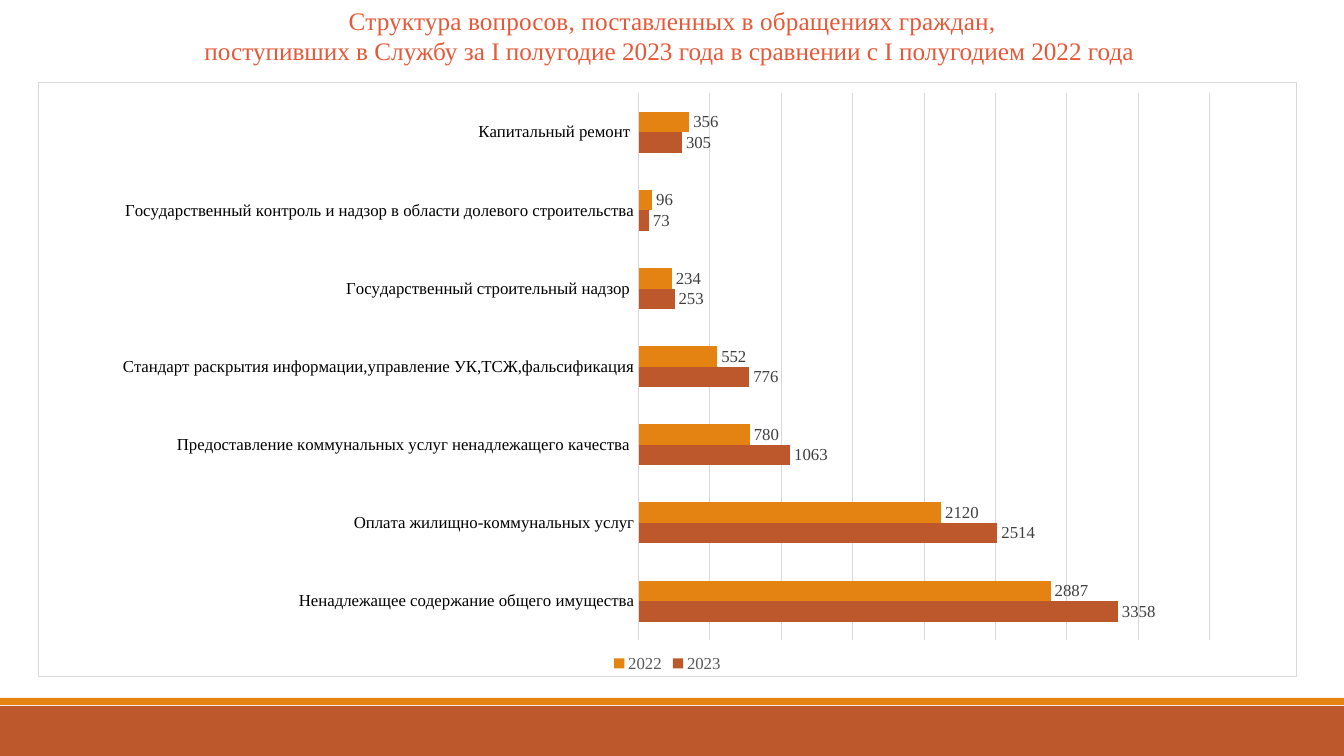
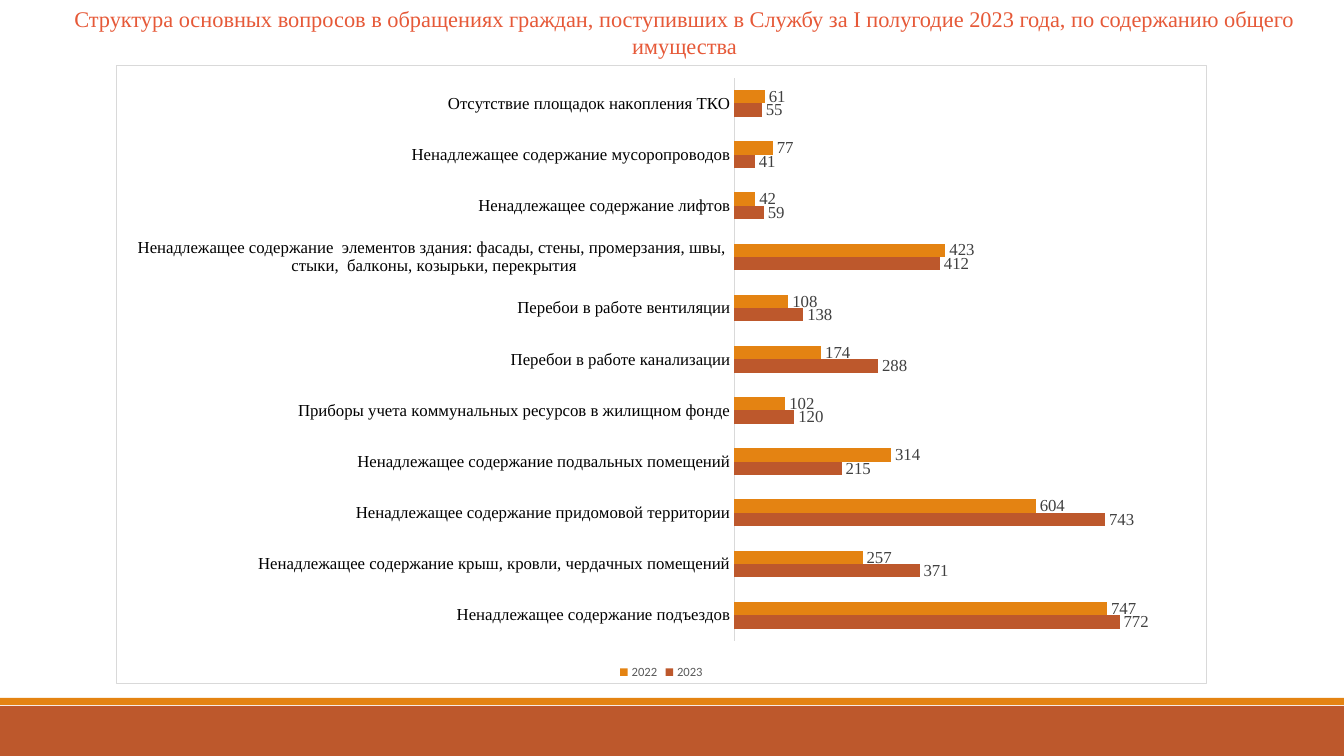
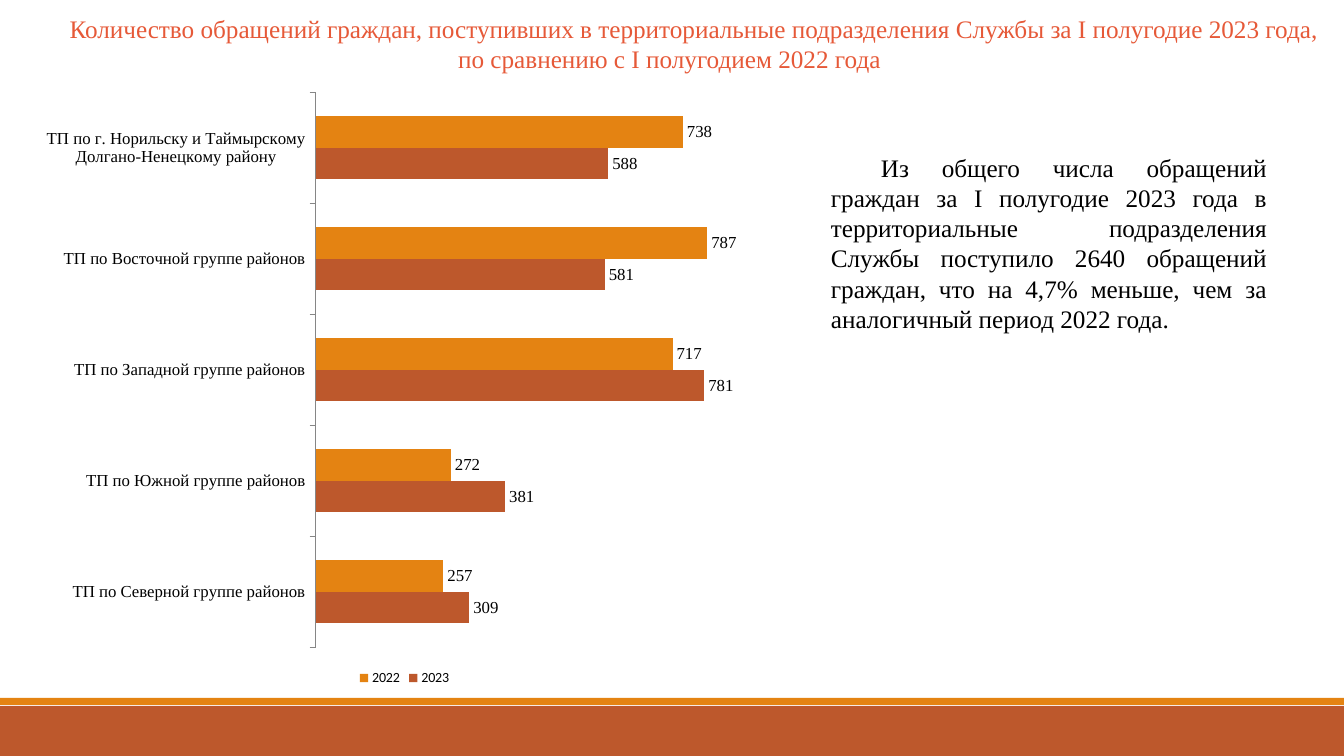
from dataclasses import dataclass

import lxml.etree
import pptx
import pptx.chart.data
import pptx.dml.color
import pptx.enum.chart
import pptx.enum.shapes
import pptx.enum.text
import pptx.oxml
import pptx.oxml.ns
import pptx.util

# Shared look
EMU_PER_PX = 12192000 / 1344
SLIDE_W, SLIDE_H = 1344, 756
SERIF, SANS = "Times New Roman", "Calibri"
RUST, ORANGE, TITLE_RED = "BD582C", "E48312", "E65938"
BLACK, DARK_GREY, MID_GREY = "000000", "404040", "595959"
AXIS_GREY, PALE_GREY, WHITE = "868686", "D9D9D9", "FFFFFF"
LABEL_SIZE = 12
CENTER = pptx.enum.text.PP_ALIGN.CENTER
JUSTIFY = pptx.enum.text.PP_ALIGN.JUSTIFY


@dataclass(frozen=True)
class Box:
    left: int
    top: int
    width: int
    height: int

    def emu(self) -> tuple[int, ...]:
        return tuple(px(n) for n in (self.left, self.top, self.width, self.height))


@dataclass(frozen=True)
class Line:
    text: str
    indent: int = 0
    spacing: int = 0  # hundredths of a point


@dataclass(frozen=True)
class Topic:
    category: str
    count_2023: int
    count_2022: int


@dataclass(frozen=True)
class Comparison:
    box: Box
    plot: tuple[float, float, float, float]  # shares of the chart: x, y, w, h
    topics: list[Topic]
    axis_max: int
    gap: int = 182
    framed: bool = True
    gridlines: bool = False
    ticks: bool = False
    value_color: str = DARK_GREY
    axis_color: str = PALE_GREY
    legend_font: str = SANS
    legend_size: int = 9
    legend_color: str = MID_GREY


@dataclass(frozen=True)
class Page:
    title_box: Box
    title: list[Line]
    title_size: int
    comparison: Comparison


BANDS = [(Box(0, 706, SLIDE_W, 50), RUST), (Box(0, 698, SLIDE_W, 7), ORANGE)]

CONCLUSION_BOX = Box(821, 147, 456, 194)
CONCLUSION = Line(
    "Из общего числа обращений граждан за I полугодие 2023 года в территориальные "
    "подразделения Службы поступило 2640 обращений граждан, что на 4,7% меньше, чем "
    "за аналогичный период 2022 года.",
    indent=50,
)

PAGES = [
    Page(
        Box(4, 0, 1337, 72),
        [
            Line("Структура вопросов, поставленных в обращениях граждан,", spacing=10),
            Line("поступивших в Службу за I полугодие 2023 года в сравнении "
                 "с I полугодием 2022 года "),
        ],
        18,
        Comparison(
            Box(38, 82, 1259, 595),
            (0.477, 0.018, 0.454, 0.921),
            [
                Topic("Ненадлежащее содержание общего имущества", 3358, 2887),
                Topic("Оплата жилищно-коммунальных услуг", 2514, 2120),
                Topic("Предоставление коммунальных услуг ненадлежащего качества ", 1063, 780),
                Topic("Стандарт раскрытия информации,управление УК,ТСЖ,фальсификация", 776, 552),
                Topic("Государственный строительный надзор ", 253, 234),
                Topic("Государственный контроль и надзор в области долевого строительства", 73, 96),
                Topic("Капитальный ремонт ", 305, 356),
            ],
            axis_max=4000,
            gridlines=True,
            legend_font=SERIF,
            legend_size=12,
        ),
    ),
    Page(
        Box(51, 0, 1267, 65),
        [Line("Структура основных вопросов в обращениях граждан, поступивших в Службу "
              "за I полугодие 2023 года, по содержанию общего имущества")],
        16,
        Comparison(
            Box(116, 65, 1091, 619),
            (0.567, 0.02, 0.412, 0.911),
            [
                Topic("Ненадлежащее содержание подъездов", 772, 747),
                Topic("Ненадлежащее содержание крыш, кровли, чердачных помещений", 371, 257),
                Topic("Ненадлежащее содержание придомовой территории", 743, 604),
                Topic("Ненадлежащее содержание подвальных помещений", 215, 314),
                Topic("Приборы учета коммунальных ресурсов в жилищном фонде", 120, 102),
                Topic("Перебои в работе канализации", 288, 174),
                Topic("Перебои в работе вентиляции", 138, 108),
                Topic("Ненадлежащее содержание  элементов здания: фасады, стены, "
                      "промерзания, швы,  стыки,  балконы, козырьки, перекрытия", 412, 423),
                Topic("Ненадлежащее содержание лифтов", 59, 42),
                Topic("Ненадлежащее содержание мусоропроводов", 41, 77),
                Topic("Отсутствие площадок накопления ТКО", 55, 61),
            ],
            axis_max=900,
        ),
    ),
    Page(
        Box(10, 8, 1319, 72),
        [
            Line("Количество обращений граждан, поступивших в территориальные "
                 "подразделения Службы за I полугодие 2023 года,", indent=49),
            Line("по сравнению с I полугодием 2022 года"),
        ],
        18,
        Comparison(
            Box(31, 80, 747, 610),
            (0.381, 0.02, 0.6, 0.91),
            [
                Topic("ТП по Северной группе районов", 309, 257),
                Topic("ТП по Южной группе районов", 381, 272),
                Topic("ТП по Западной группе районов", 781, 717),
                Topic("ТП по Восточной группе районов", 581, 787),
                Topic("ТП по г. Норильску и Таймырскому Долгано-Ненецкому району", 588, 738),
            ],
            axis_max=900,
            gap=150,
            framed=False,
            ticks=True,
            value_color=BLACK,
            axis_color=AXIS_GREY,
            legend_size=10,
            legend_color=BLACK,
        ),
    ),
]


# Formatting helpers
def px(length: int) -> int:
    return round(length * EMU_PER_PX)


def rgb(color: str) -> pptx.dml.color.RGBColor:
    return pptx.dml.color.RGBColor.from_string(color)


def set_font(font, name: str, size: int, color: str) -> None:
    font.name = name
    font.size = pptx.util.Pt(size)
    font.bold = False
    font.color.rgb = rgb(color)


def set_line(line, color: str) -> None:
    line.color.rgb = rgb(color)
    line.width = pptx.util.Pt(0.75)


def fill_text(shape, box: Box, lines: list[Line], size: int, color: str, align) -> None:
    shape.left, shape.top, shape.width, shape.height = box.emu()
    frame = shape.text_frame
    frame.word_wrap = True
    frame.auto_size = pptx.enum.text.MSO_AUTO_SIZE.SHAPE_TO_FIT_TEXT
    frame.vertical_anchor = pptx.enum.text.MSO_ANCHOR.TOP
    frame.text = "\n".join(line.text for line in lines)
    for paragraph, line in zip(frame.paragraphs, lines):
        paragraph.alignment = align
        set_font(paragraph.font, SERIF, size, color)
        if line.indent:
            paragraph._p.get_or_add_pPr().set("indent", str(px(line.indent)))
        if line.spacing:
            paragraph.font._rPr.set("spc", str(line.spacing))


# Bands are drawn on a slide, then moved to the master
def add_bands(deck, slide) -> None:
    for box, color in BANDS:
        band = slide.shapes.add_shape(pptx.enum.shapes.MSO_SHAPE.RECTANGLE, *box.emu())
        band.shadow.inherit = False
        band.fill.solid()
        band.fill.fore_color.rgb = rgb(color)
        band.line.fill.background()
        deck.slide_master.shapes.element.insert(2, band.element)


# Chart parts that need XML
def add_frame(chart) -> None:
    frame = pptx.oxml.parse_xml(
        f"<c:spPr {pptx.oxml.ns.nsdecls('c', 'a')}>"
        f'<a:solidFill><a:srgbClr val="{WHITE}"/></a:solidFill>'
        f'<a:ln w="9525"><a:solidFill><a:srgbClr val="{PALE_GREY}"/></a:solidFill></a:ln>'
        "</c:spPr>"
    )
    chart.element.find(pptx.oxml.ns.qn("c:chart")).addnext(frame)


def place_plot(chart, shares: tuple[float, float, float, float]) -> None:
    settings = [("layoutTarget", "inner"), ("xMode", "edge"), ("yMode", "edge")]
    settings += zip("xywh", shares)
    plot_area = chart.element.find(".//" + pptx.oxml.ns.qn("c:plotArea"))
    for old_layout in plot_area.findall(pptx.oxml.ns.qn("c:layout")):
        plot_area.remove(old_layout)
    layout = lxml.etree.Element(pptx.oxml.ns.qn("c:layout"))
    manual = lxml.etree.SubElement(layout, pptx.oxml.ns.qn("c:manualLayout"))
    for tag, value in settings:
        lxml.etree.SubElement(manual, pptx.oxml.ns.qn(f"c:{tag}"), val=str(value))
    plot_area.insert(0, layout)


def add_comparison(slide, comparison: Comparison) -> None:
    counts = pptx.chart.data.CategoryChartData()
    counts.categories = [topic.category for topic in comparison.topics]
    counts.add_series("2023", [topic.count_2023 for topic in comparison.topics])
    counts.add_series("2022", [topic.count_2022 for topic in comparison.topics])
    chart = slide.shapes.add_chart(
        pptx.enum.chart.XL_CHART_TYPE.BAR_CLUSTERED, *comparison.box.emu(), counts
    ).chart
    chart.has_title = False
    set_font(chart.font, SANS, 10, BLACK)
    if comparison.framed:
        add_frame(chart)
    place_plot(chart, comparison.plot)

    # Bars and their values
    bars = chart.plots[0]
    bars.vary_by_categories = False
    bars.gap_width = comparison.gap
    bars.overlap = 0
    for year, color in zip(bars.series, (RUST, ORANGE)):
        year.invert_if_negative = False
        year.format.fill.solid()
        year.format.fill.fore_color.rgb = rgb(color)
        values = year.data_labels
        values.show_value = True
        values.position = pptx.enum.chart.XL_LABEL_POSITION.OUTSIDE_END
        set_font(values.font, SERIF, LABEL_SIZE, comparison.value_color)

    # Axes
    tick_mark = pptx.enum.chart.XL_TICK_MARK
    topics_axis = chart.category_axis
    topics_axis.major_tick_mark = tick_mark.OUTSIDE if comparison.ticks else tick_mark.NONE
    set_font(topics_axis.tick_labels.font, SERIF, LABEL_SIZE, BLACK)
    set_line(topics_axis.format.line, comparison.axis_color)
    count_axis = chart.value_axis
    count_axis.visible = False
    count_axis.minimum_scale = 0
    count_axis.maximum_scale = comparison.axis_max
    count_axis.has_major_gridlines = comparison.gridlines
    if comparison.gridlines:
        count_axis.major_unit = 500
        set_line(count_axis.major_gridlines.format.line, PALE_GREY)

    # Legend
    chart.has_legend = True
    chart.legend.position = pptx.enum.chart.XL_LEGEND_POSITION.BOTTOM
    chart.legend.include_in_layout = False
    set_font(chart.legend.font, comparison.legend_font, comparison.legend_size,
             comparison.legend_color)


def main() -> None:
    deck = pptx.Presentation()
    deck.slide_width, deck.slide_height = px(SLIDE_W), px(SLIDE_H)
    title_only = deck.slide_layouts[5]
    slides = [deck.slides.add_slide(title_only) for _ in PAGES]
    add_bands(deck, slides[0])
    for slide, page in zip(slides, PAGES):
        fill_text(slide.shapes.title, page.title_box, page.title, page.title_size,
                  TITLE_RED, CENTER)
        add_comparison(slide, page.comparison)

    # Conclusion beside the last chart
    conclusion = slides[-1].shapes.add_textbox(*CONCLUSION_BOX.emu())
    fill_text(conclusion, CONCLUSION_BOX, [CONCLUSION], 18, BLACK, JUSTIFY)
    deck.save("out.pptx")


if __name__ == "__main__":
    main()
